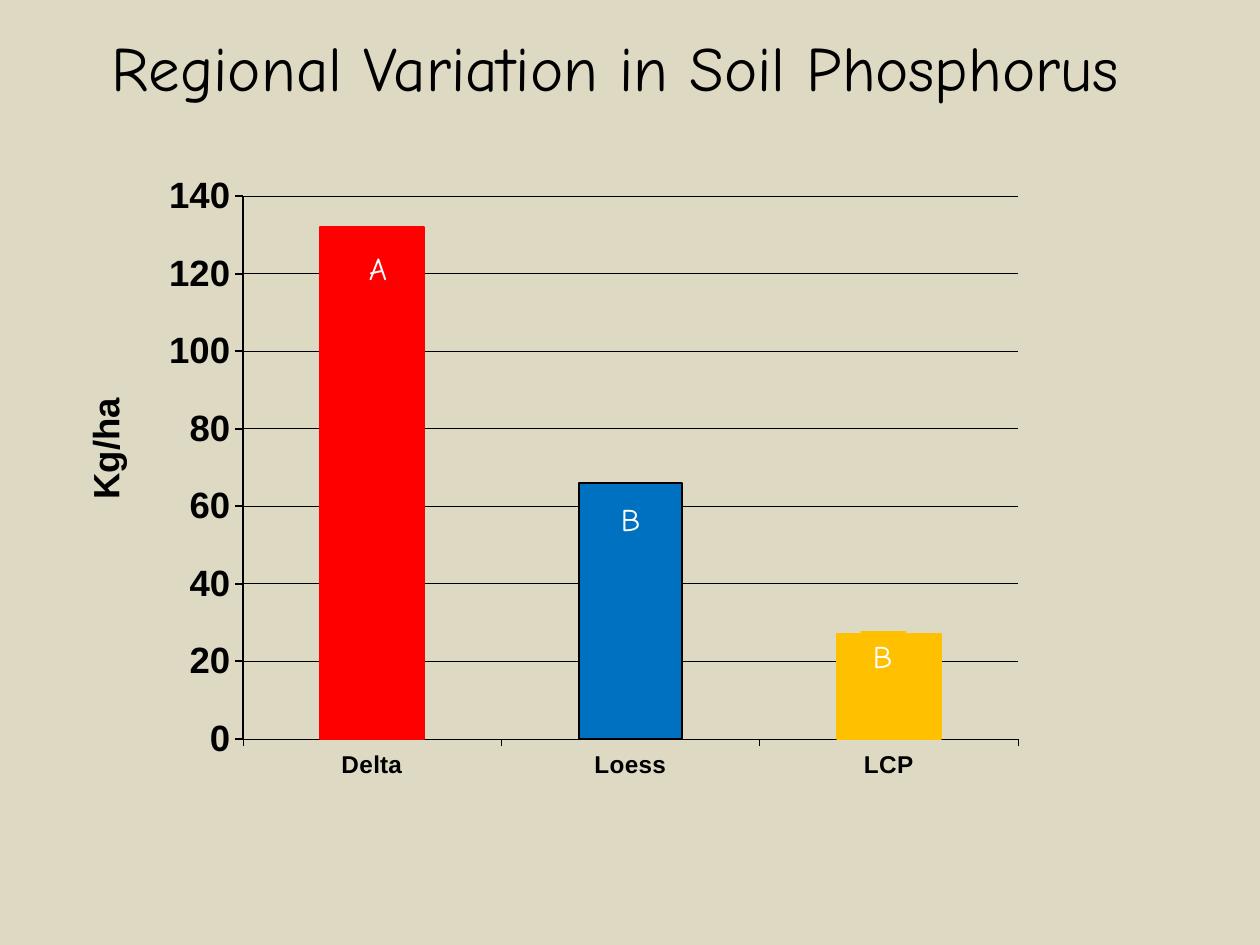
from dataclasses import dataclass

from lxml import etree
from pptx import Presentation
from pptx.chart.data import CategoryChartData
from pptx.dml.color import RGBColor
from pptx.enum.chart import XL_CHART_TYPE as ChartType
from pptx.enum.chart import XL_TICK_LABEL_POSITION as LabelPosition
from pptx.enum.chart import XL_TICK_MARK as TickMark
from pptx.enum.shapes import MSO_SHAPE as Preset
from pptx.enum.text import MSO_ANCHOR as Anchor
from pptx.enum.text import MSO_AUTO_SIZE as AutoSize
from pptx.enum.text import PP_ALIGN as Align
from pptx.oxml.ns import qn
from pptx.util import Inches, Pt


@dataclass(frozen=True)
class Theme:
    background: str = "DDD9C3"
    ink: str = "000000"
    light: str = "FFFFFF"
    bars: str = "4F81BD"
    delta: str = "FF0000"
    loess: str = "0070C0"
    lcp: str = "FFC000"
    display_font: str = "Comic Neue"
    chart_font: str = "Arial"
    title_size: float = 36
    letter_size: float = 18
    value_size: float = 20.9
    category_size: float = 13.9
    thin: float = 0.29
    thick: float = 1.16


THEME = Theme()
WIDTH, HEIGHT = Inches(10), Inches(7.5)
COLUMNS, ROWS = 100, 75
LETTER_SIZE = (3.6, 4)
REGIONS = [
    ("Delta", 132, THEME.delta, THEME.delta),
    ("Loess", 66, THEME.loess, THEME.ink),
    ("LCP", 27, THEME.lcp, THEME.lcp),
]


def grid(column, row, columns, rows):
    across, down = WIDTH / COLUMNS, HEIGHT / ROWS
    return [round(n) for n in (column * across, row * down, columns * across, rows * down)]


def color(value):
    return RGBColor.from_string(value)


def style_font(font, name, size, ink, bold=False):
    font.name, font.size, font.bold = name, Pt(size), bold
    font.color.rgb = color(ink)


def style_line(line, ink, width):
    line.color.rgb = color(ink)
    line.width = Pt(width)


def style_fill(fill, value):
    fill.solid()
    fill.fore_color.rgb = color(value)


def place_layout(parent, **settings):
    for old in parent.findall(qn("c:layout")):
        parent.remove(old)
    layout = etree.Element(qn("c:layout"))
    manual = etree.SubElement(layout, qn("c:manualLayout"))
    for tag, value in settings.items():
        etree.SubElement(manual, qn(f"c:{tag}")).set("val", str(value))
    return layout


def add_title(slide, text):
    title = slide.shapes.title
    title.left, title.top, title.width, title.height = grid(4.8, 1.7, 88.1, 7.1)
    frame = title.text_frame
    frame.text = text
    frame.word_wrap = False
    frame.auto_size = AutoSize.SHAPE_TO_FIT_TEXT
    frame.vertical_anchor = Anchor.MIDDLE
    heading = frame.paragraphs[0]
    heading.alignment = Align.CENTER
    style_font(heading.runs[0].font, THEME.display_font, THEME.title_size, THEME.ink)


def style_axis(axis, size, width):
    axis.major_tick_mark = TickMark.OUTSIDE
    axis.minor_tick_mark = TickMark.NONE
    style_font(axis.tick_labels.font, THEME.chart_font, size, THEME.ink, True)
    style_line(axis.format.line, THEME.ink, width)


def style_value_axis(axis):
    style_axis(axis, THEME.value_size, THEME.thick)
    axis.minimum_scale, axis.maximum_scale, axis.major_unit = 0, 140, 20
    axis.has_major_gridlines = True
    style_line(axis.major_gridlines.format.line, THEME.ink, THEME.thin)
    unit = axis.axis_title
    unit.text_frame.text = "Kg/ha"
    style_font(unit.text_frame.paragraphs[0].runs[0].font,
               THEME.chart_font, THEME.value_size, THEME.ink, True)
    unit_layout = place_layout(unit._element, xMode="edge", yMode="edge", x=0.01, y=0.33)
    unit._element.find(qn("c:tx")).addnext(unit_layout)


def color_bars(plot):
    plot.gap_width = 150
    plot.vary_by_categories = False
    phosphorus = plot.series[0]
    style_fill(phosphorus.format.fill, THEME.bars)
    style_line(phosphorus.format.line, THEME.ink, THEME.thick)
    for index, (_, _, fill, outline) in enumerate(REGIONS):
        bar = phosphorus.points[index].format
        style_fill(bar.fill, fill)
        style_line(bar.line, outline, THEME.thick)


def add_phosphorus_chart(slide):
    data = CategoryChartData()
    data.categories = [region[0] for region in REGIONS]
    data.add_series("Series 1", [region[1] for region in REGIONS])
    chart = slide.shapes.add_chart(
        ChartType.COLUMN_CLUSTERED, *grid(5.1, 11.4, 89.7, 59.5), data).chart
    chart.has_legend = False
    chart.has_title = False
    style_font(chart.font, THEME.chart_font, THEME.value_size, THEME.ink, True)
    style_axis(chart.category_axis, THEME.category_size, THEME.thin)
    chart.category_axis.tick_label_position = LabelPosition.LOW
    style_value_axis(chart.value_axis)
    color_bars(chart.plots[0])
    plot_area = chart._chartSpace.chart.plotArea
    plot_area.insert(0, place_layout(
        plot_area, layoutTarget="inner", xMode="edge", yMode="edge",
        x=0.158, y=0.07, w=0.686, h=0.724))


def add_letter(slide, text, column, row, wrap=True, fill=None):
    place = grid(column, row, *LETTER_SIZE)
    if fill:
        letter = slide.shapes.add_shape(Preset.RECTANGLE, *place)
        letter.shadow.inherit = False
        style_fill(letter.fill, fill)
        letter.line.fill.background()
    else:
        letter = slide.shapes.add_textbox(*place)
    frame = letter.text_frame
    frame.text = text
    frame.word_wrap = wrap
    frame.auto_size = AutoSize.SHAPE_TO_FIT_TEXT
    frame.vertical_anchor = Anchor.TOP
    paragraph = frame.paragraphs[0]
    paragraph.alignment = Align.LEFT
    style_font(paragraph.runs[0].font, THEME.display_font, THEME.letter_size, THEME.light)


def main():
    deck = Presentation()
    deck.slide_width, deck.slide_height = WIDTH, HEIGHT
    slide = deck.slides.add_slide(deck.slide_layouts[5])
    style_fill(slide.background.fill, THEME.background)
    add_title(slide, "Regional Variation in Soil Phosphorus")
    add_phosphorus_chart(slide)
    add_letter(slide, "A", 28.3, 19.3, wrap=False)
    add_letter(slide, "B", 48.3, 39.2)
    add_letter(slide, "B", 68.3, 50.1, fill=THEME.lcp)
    deck.save("out.pptx")


if __name__ == "__main__":
    main()
